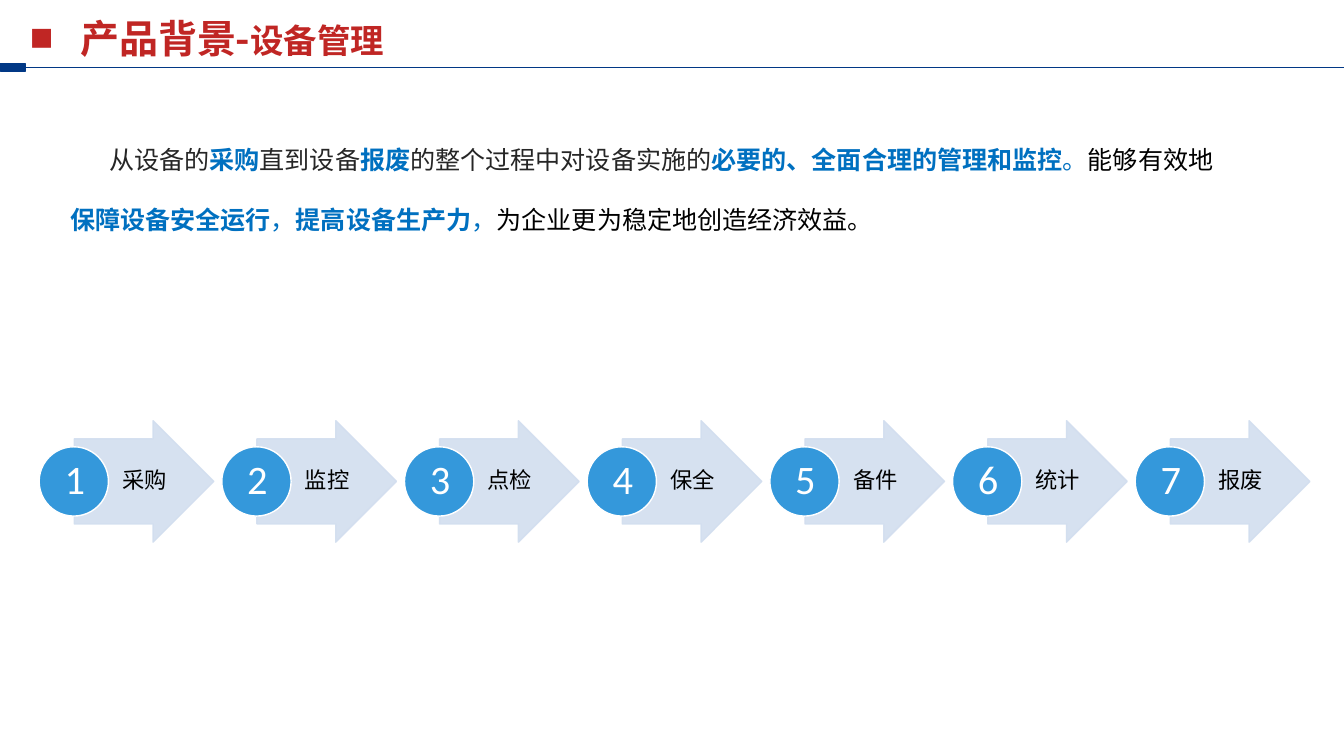
from dataclasses import dataclass

from lxml import etree
from pptx import Presentation
from pptx import util as u
from pptx.dml.color import RGBColor
from pptx.enum import shapes, text
from pptx.oxml.ns import qn

PX = 9144  # one px is a hundredth of an inch
COLORS = {
    "navy": "013885", "red": "C02624", "blue": "0070C0", "gray": "262626",
    "black": "000000", "white": "FFFFFF", "arrow": "D2DEEF", "circle": "3498DB",
}
CJK, LATIN = "Noto Sans CJK SC", "Calibri"


@dataclass(frozen=True)
class Box:
    left: int
    top: int
    width: int
    height: int

    def emu(self) -> tuple[int, ...]:
        return tuple(v * PX for v in (self.left, self.top, self.width, self.height))

    def shifted(self, dx: int) -> "Box":
        return Box(self.left + dx, self.top, self.width, self.height)


@dataclass(frozen=True)
class Run:
    words: str
    color: str
    size: int
    bold: bool = False
    font: str = CJK


def rgb(name: str) -> RGBColor:
    return RGBColor.from_string(COLORS[name])


def add_runs(paragraph, runs: list[Run]) -> None:
    for item in runs:
        run = paragraph.add_run()
        run.text = item.words
        run.font.size = u.Pt(item.size)
        run.font.bold = item.bold
        run.font.name = item.font
        run.font.color.rgb = rgb(item.color)
        east_asian = etree.Element(qn("a:ea"), typeface=item.font)
        run.font._element.find(qn("a:latin")).addnext(east_asian)


def add_text(parent, box: Box, runs: list[Run], spacing: float = 1.0):
    frame = parent.add_textbox(*box.emu()).text_frame
    frame.word_wrap = True
    paragraph = frame.paragraphs[0]
    paragraph.line_spacing = spacing
    add_runs(paragraph, runs)
    return frame


def add_centered(parent, box: Box, run: Run, insets: tuple[int, int, int, int]) -> None:
    frame = add_text(parent, box, [run], 0.9)
    frame.vertical_anchor = text.MSO_ANCHOR.MIDDLE
    frame.paragraphs[0].alignment = text.PP_ALIGN.CENTER
    (frame.margin_left, frame.margin_top,
     frame.margin_right, frame.margin_bottom) = (v * PX for v in insets)


def add_filled(parent, kind, box: Box, fill: str, line: str, width: float):
    shape = parent.add_shape(kind, *box.emu())
    shape.shadow.inherit = False
    shape.fill.solid()
    shape.fill.fore_color.rgb = rgb(fill)
    shape.line.color.rgb = rgb(line)
    shape.line.width = u.Pt(width)
    return shape


def indent(paragraph, margin: int, first: int) -> None:
    properties = paragraph._p.get_or_add_pPr()
    properties.set("marL", str(margin * PX))
    properties.set("indent", str(first * PX))


def add_header(parent) -> None:
    rule = parent.add_connector(
        shapes.MSO_CONNECTOR.STRAIGHT, 1339 * PX, 67 * PX, 25 * PX, 67 * PX)
    rule.line.color.rgb = rgb("navy")
    rule.line.width = u.Pt(0.5)
    etree.SubElement(rule._element.spPr, qn("a:effectLst"))
    tab = add_filled(parent, shapes.MSO_SHAPE.RECTANGLE, Box(1, 63, 24, 8),
                     "navy", "navy", 0.75)
    rule.end_connect(tab, 3)

    title = add_text(parent, Box(20, 9, 830, 55), [
        Run("产品背景-", "red", 28, True), Run("设备管理", "red", 24, True)])
    heading = title.paragraphs[0]
    indent(heading, 50, -50)
    properties = heading._p.get_or_add_pPr()
    etree.SubElement(properties, qn("a:buFont"), typeface="Arial")
    etree.SubElement(properties, qn("a:buChar"), char="■")


def add_summary(parent) -> None:
    pieces = [
        ("从设备的", "gray", False), ("采购", "blue", True),
        ("直到设备", "gray", False), ("报废", "blue", True),
        ("的整个过程中对设备实施的", "gray", False),
        ("必要的、全面合理的管理和监控", "blue", True), ("。", "blue", False),
        ("能够有效地", "black", False), ("保障设备安全运行", "blue", True),
        ("，", "blue", False), ("提高设备生产力", "blue", True),
        ("，", "blue", False), ("为企业更为稳定地创造经济效益。", "black", False),
    ]
    runs = [Run(words, color, 18, bold) for words, color, bold in pieces]
    summary = add_text(parent, Box(60, 109, 1177, 131), runs, 2.0)
    indent(summary.paragraphs[0], 0, 39)


def add_step(parent, number: int, label: str) -> None:
    dx = (number - 1) * 182
    arrow = add_filled(parent, shapes.MSO_SHAPE.RIGHT_ARROW,
                       Box(74, 419, 139, 121).shifted(dx), "arrow", "arrow", 1)
    arrow.adjustments[0], arrow.adjustments[1] = 0.7, 0.5
    for color in arrow._element.spPr.iter(qn("a:srgbClr")):
        etree.SubElement(color, qn("a:alpha"), val="90000")
    add_centered(parent, Box(109, 437, 68, 85).shifted(dx),
                 Run(label, "black", 16), (4, 1, 2, 1))
    add_filled(parent, shapes.MSO_SHAPE.OVAL, Box(39, 445, 69, 69).shifted(dx),
               "circle", "white", 1)
    add_centered(parent, Box(50, 455, 49, 49).shifted(dx),
                 Run(str(number), "white", 29, font=LATIN), (2, 2, 2, 2))


def main() -> None:
    deck = Presentation()
    deck.slide_width, deck.slide_height = 1339 * PX, 748 * PX
    slide = deck.slides.add_slide(deck.slide_layouts[6])

    # Title band and introduction
    add_header(slide.shapes)
    add_summary(slide.shapes)

    # Equipment life cycle
    life_cycle = slide.shapes.add_group_shape().shapes
    steps = ["采购", "监控", "点检", "保全", "备件", "统计", "报废"]
    for number, label in enumerate(steps, start=1):
        add_step(life_cycle, number, label)

    deck.save("out.pptx")


if __name__ == "__main__":
    main()
